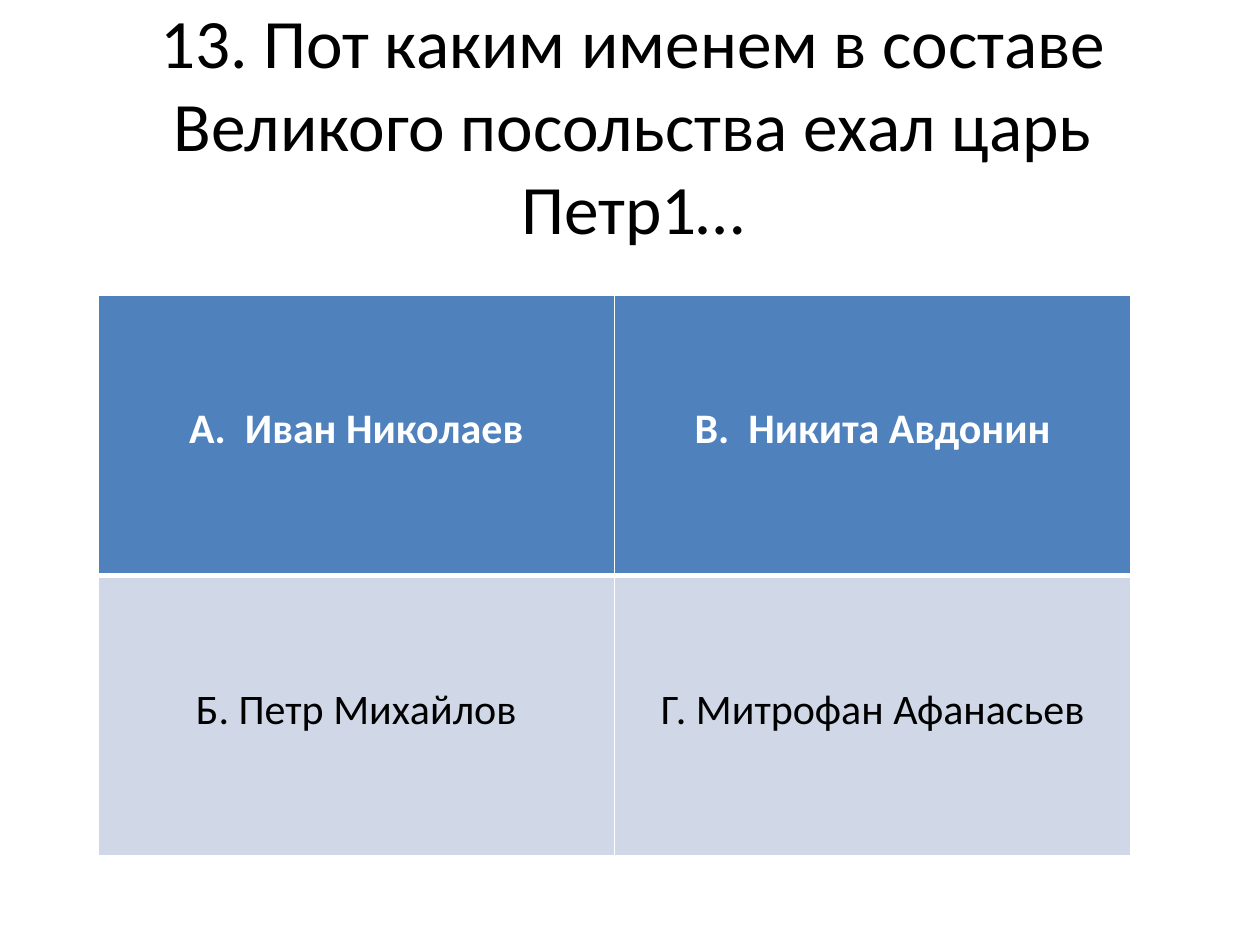
from pptx import Presentation
from pptx.dml.color import RGBColor
from pptx.enum.text import MSO_ANCHOR, MSO_AUTO_SIZE, PP_ALIGN
from pptx.oxml import parse_xml
from pptx.oxml.ns import nsdecls
from pptx.util import Pt

# Content
TITLE = "13. Пот каким именем в составе Великого посольства ехал царь Петр1…"
ANSWERS = [
    ["А.  Иван Николаев", "В.  Никита Авдонин"],
    ["Б. Петр Михайлов", "Г. Митрофан Афанасьев"],
]

THEME = {
    "font": "Calibri", "title_size": 39.6, "answer_size": 24,
    "text": "000000", "header_text": "FFFFFF",
    "header_fill": "4F81BD", "body_fill": "D0D8E8", "border": "FFFFFF",
}

# Layout in px, 126 to the inch
SCALE = 914400 // 126
TITLE_BOX = (69, 59, 1128, 129)
TABLE_BOX = (98, 295, 1033, 561)
ANSWER_TOP = 109  # inset from the top of a cell to its answer


def px(*values):
    return [v * SCALE for v in values]


def write(tf, text, size, color, bold=False):
    p = tf.paragraphs[0]
    p.alignment = PP_ALIGN.CENTER
    r = p.add_run()
    r.text = text
    r.font.name = THEME["font"]
    r.font.size = Pt(size)
    r.font.bold = bold
    r.font.color.rgb = RGBColor.from_string(color)


def add_borders(cell, **widths):
    tc_pr = cell._tc.get_or_add_tcPr()
    for i, side in enumerate(("L", "R", "T", "B")):
        tc_pr.insert(i, parse_xml(
            f'<a:ln{side} {nsdecls("a")} w="{Pt(widths.get(side, 1))}">'
            f'<a:solidFill><a:srgbClr val="{THEME["border"]}"/></a:solidFill>'
            f'</a:ln{side}>'))


prs = Presentation()
prs.slide_width, prs.slide_height = px(1260, 945)
s = prs.slides.add_slide(prs.slide_layouts[5])

# Question
title = s.shapes.title
title.left, title.top, title.width, title.height = px(*TITLE_BOX)
tf = title.text_frame
tf.word_wrap = True
tf.auto_size = MSO_AUTO_SIZE.NONE
tf.vertical_anchor = MSO_ANCHOR.MIDDLE
write(tf, TITLE, THEME["title_size"], THEME["text"])

# Answer grid
table = s.shapes.add_table(len(ANSWERS), len(ANSWERS[0]), *px(*TABLE_BOX)).table
table.horz_banding = False
for i, row in enumerate(ANSWERS):
    header = i == 0
    for j, answer in enumerate(row):
        cell = table.cell(i, j)
        cell.vertical_anchor = MSO_ANCHOR.TOP
        cell.margin_top = px(ANSWER_TOP)[0]
        cell.fill.solid()
        cell.fill.fore_color.rgb = RGBColor.from_string(
            THEME["header_fill" if header else "body_fill"])
        write(cell.text_frame, answer, THEME["answer_size"],
              THEME["header_text" if header else "text"], bold=header)
        # The rule under the header row is heavier
        add_borders(cell, T=1 if header else 3, B=3 if header else 1)

prs.save("out.pptx")
